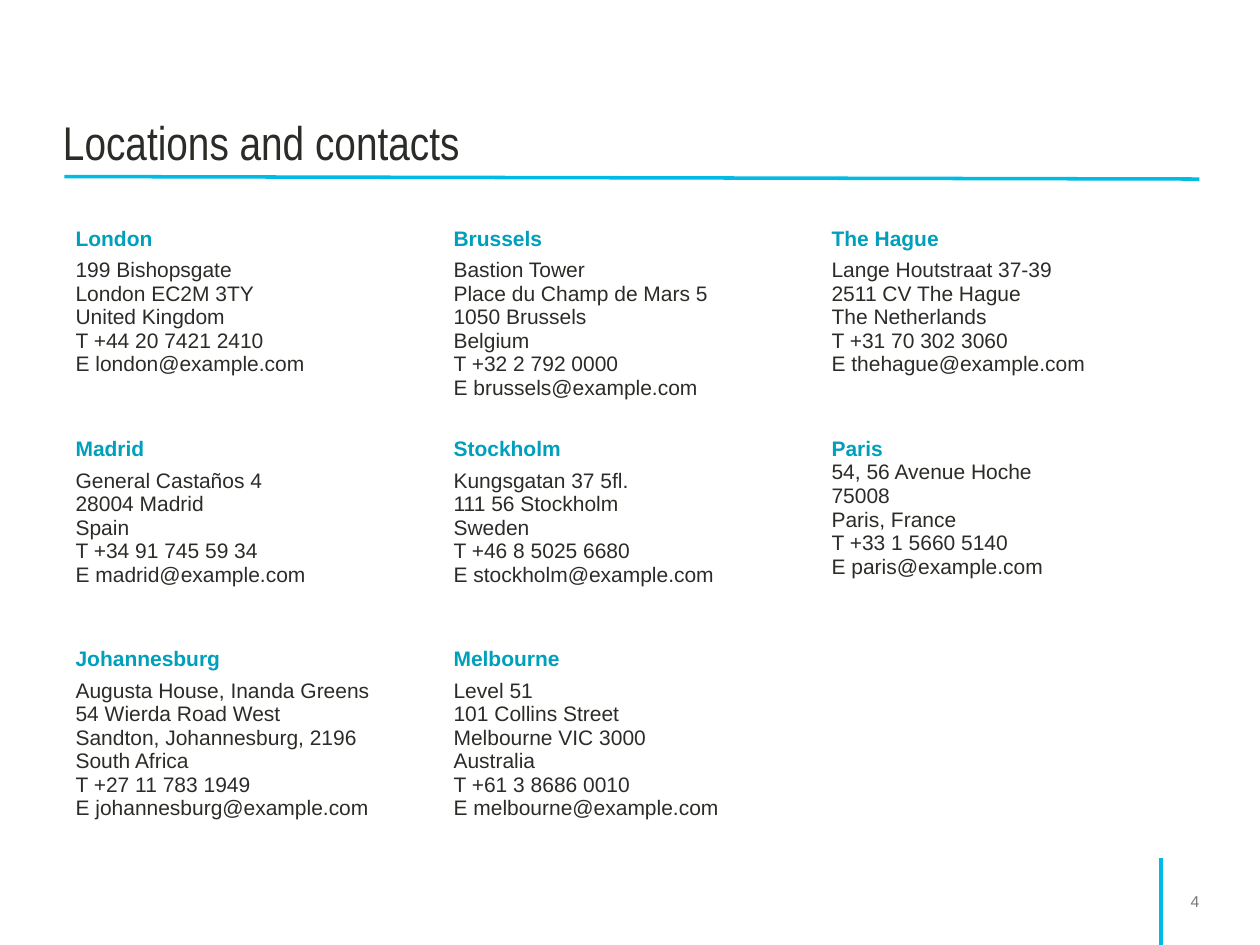
from lxml import etree
from pptx import Presentation
from pptx.dml.color import RGBColor
from pptx.enum.shapes import MSO_CONNECTOR
from pptx.enum.text import MSO_ANCHOR, PP_ALIGN
from pptx.oxml.ns import qn
from pptx.util import Cm, Pt

STRAIGHT = MSO_CONNECTOR.STRAIGHT
TOP, BOTTOM = MSO_ANCHOR.TOP, MSO_ANCHOR.BOTTOM
LEFT, RIGHT = PP_ALIGN.LEFT, PP_ALIGN.RIGHT

COLORS = {"rule": "00BCE4", "city": "00A0BD", "text": "2A2D27", "number": "77797C"}

TITLE = {"name": "Arial Narrow", "size": Pt(27), "bold": False, "color": "text"}
CITY = {"name": "Arial", "size": Pt(12), "bold": True, "color": "city"}
ADDRESS = {**CITY, "bold": False, "color": "text"}
NUMBER = {**ADDRESS, "size": Pt(9), "color": "number"}

COLUMNS = 3
EMAIL_DOMAIN = "example.com"
CITY_GAP = Pt(4.6)

# City, address lines, telephone, gap below the city name
OFFICES = [
    ("London", ["199 Bishopsgate", "London EC2M 3TY", "United Kingdom"],
     "+44 20 7421 2410", CITY_GAP),
    ("Brussels", ["Bastion Tower", "Place du Champ de Mars 5", "1050 Brussels", "Belgium"],
     "+32 2 792 0000", CITY_GAP),
    ("The Hague", ["Lange Houtstraat 37-39", "2511 CV The Hague", "The Netherlands"],
     "+31 70 302 3060", CITY_GAP),
    ("Madrid", ["General Castaños 4", "28004 Madrid", "Spain"],
     "+34 91 745 59 34", CITY_GAP),
    ("Stockholm", ["Kungsgatan 37 5fl.", "111 56 Stockholm", "Sweden"],
     "+46 8 5025 6680", CITY_GAP),
    ("Paris", ["54, 56 Avenue Hoche", "75008", "Paris, France"],
     "+33 1 5660 5140", Pt(0)),
    ("Johannesburg", ["Augusta House, Inanda Greens", "54 Wierda Road West",
                      "Sandton, Johannesburg, 2196", "South Africa"],
     "+27 11 783 1949", CITY_GAP),
    ("Melbourne", ["Level 51", "101 Collins Street", "Melbourne VIC 3000", "Australia"],
     "+61 3 8686 0010", CITY_GAP),
]


def write(paragraph, text, style):
    """Put one formatted run into a paragraph."""
    run = paragraph.add_run()
    run.text = text
    for attribute, value in style.items():
        if attribute == "color":
            run.font.color.rgb = RGBColor.from_string(COLORS[value])
        else:
            setattr(run.font, attribute, value)


def add_rule(slide, left, top, right, bottom):
    rule = slide.shapes.add_connector(STRAIGHT, left, top, right, bottom)
    rule.line.color.rgb = RGBColor.from_string(COLORS["rule"])
    rule.line.width = Pt(2)
    etree.SubElement(rule._element.spPr, qn("a:effectLst"))


def add_label(slide, box, text, style, frame_format, alignment):
    frame = slide.shapes.add_textbox(*box).text_frame
    for attribute, value in {"word_wrap": True, **frame_format}.items():
        setattr(frame, attribute, value)
    frame.paragraphs[0].alignment = alignment
    write(frame.paragraphs[0], text, style)


def add_header(slide, left, top, width, height):
    """Title standing on a slightly sloping rule."""
    frame_format = {"vertical_anchor": BOTTOM, "margin_left": 0, "margin_right": Cm(0.1)}
    add_label(slide, (left, top, width, height), "Locations and contacts",
              TITLE, frame_format, LEFT)
    bottom = top + height
    add_rule(slide, left + Cm(0.03), bottom, left + width + Cm(0.05), bottom + Cm(0.05))


def fill_office(cell, city, address, telephone, gap):
    email = f"{city.lower().replace(' ', '')}@{EMAIL_DOMAIN}"
    frame = cell.text_frame
    write(frame.paragraphs[0], city, CITY)
    frame.paragraphs[0].space_after = gap
    for line in [*address, f"T {telephone}", f"E {email}"]:
        write(frame.add_paragraph(), line, ADDRESS)


def add_offices(slide, left, top, width, height):
    """Grid of offices, filled row by row."""
    rows = -(-len(OFFICES) // COLUMNS)
    table = slide.shapes.add_table(rows, COLUMNS, left, top, width, height).table
    table.first_row = table.horz_banding = False
    for cell in table.iter_cells():
        cell.fill.background()
        cell.vertical_anchor = TOP
    for index, office in enumerate(OFFICES):
        fill_office(table.cell(*divmod(index, COLUMNS)), *office)


def add_footer(slide, left, top, width, height):
    """Page number to the right of an upright rule."""
    add_rule(slide, left, top, left, top + height)
    box = (left, top + Cm(0.56), width, Cm(0.64))
    add_label(slide, box, "4", NUMBER, {"margin_right": 0}, RIGHT)


def main():
    presentation = Presentation()
    presentation.slide_width, presentation.slide_height = Cm(25.4), Cm(19.05)
    slide = presentation.slides.add_slide(presentation.slide_layouts[6])
    add_header(slide, Cm(1.27), Cm(0.76), Cm(22.86), Cm(2.8))
    add_offices(slide, Cm(1.27), Cm(4.45), Cm(22.86), Cm(12.72))
    add_footer(slide, Cm(23.4), Cm(17.3), Cm(0.78), Cm(1.75))
    presentation.save("out.pptx")


if __name__ == "__main__":
    main()
